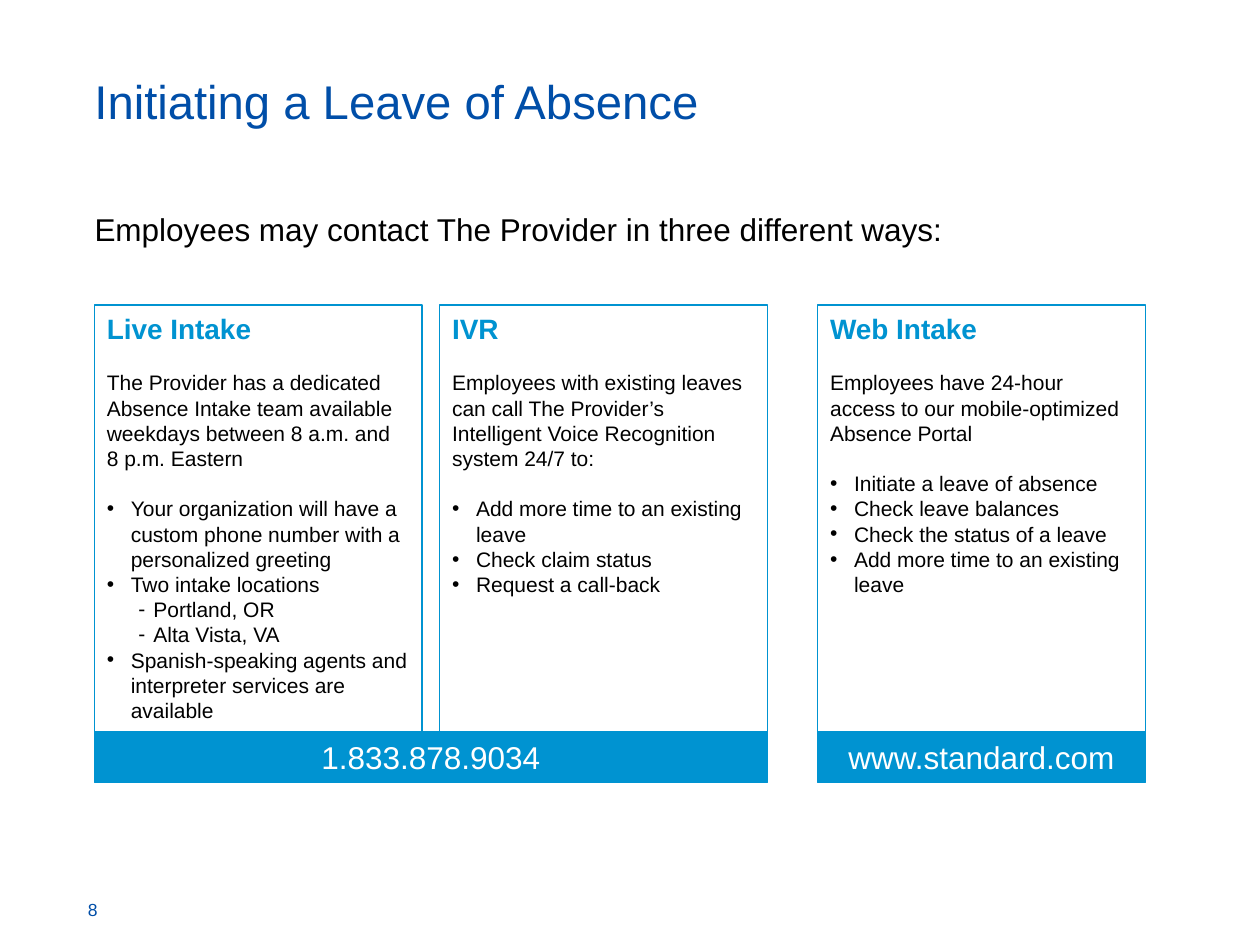
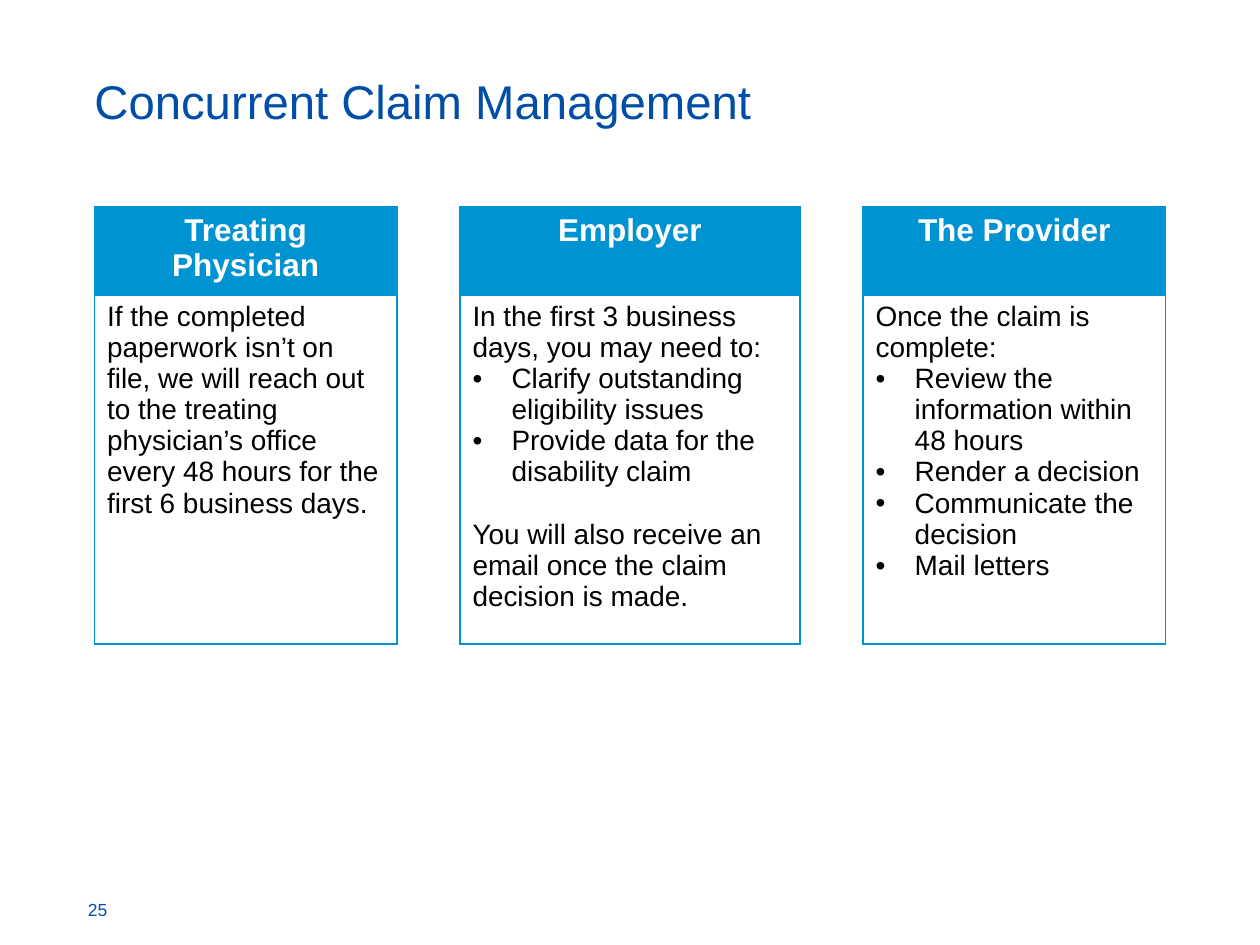
from lxml import etree
from pptx import Presentation
from pptx.dml.color import RGBColor
from pptx.enum.shapes import MSO_SHAPE
from pptx.enum.text import MSO_ANCHOR, PP_ALIGN
from pptx.oxml.ns import qn
from pptx.util import Inches, Pt

RECT = MSO_SHAPE.RECTANGLE
TOP, MID, LOW = MSO_ANCHOR.TOP, MSO_ANCHOR.MIDDLE, MSO_ANCHOR.BOTTOM
LEFT, CENTER = PP_ALIGN.LEFT, PP_ALIGN.CENTER

FONT = "Arial"
NAVY, BLUE, BLACK, WHITE = "004EA8", "0093D1", "000000", "FFFFFF"

# Grid: 100 columns by 75 rows, square cells
WIDE, HIGH = 100, 75
UNIT = Inches(0.1)
EDGE = 7.5       # left margin
BODY = 16.4      # top of the content
DOT, DASH = "•", "-"


def grid(*cells):
    return [round(n * UNIT) for n in cells]


def tint(code):
    return RGBColor.from_string(code)


def write(frame, text, size=12, color=BLACK, bold=False, align=LEFT,
          gap=0, mark=None, left=0, hang=0):
    """Add one paragraph, using the empty first one if it is free."""
    par = frame.paragraphs[0]
    if par.runs:
        par = frame.add_paragraph()
    par.alignment = align
    if gap:
        par.space_before = Pt(gap)
    if mark:
        props = par._p.get_or_add_pPr()
        props.set("marL", str(Inches(left)))
        props.set("indent", str(-Inches(hang)))
        face = etree.SubElement(props, qn("a:buFont"))
        face.set("typeface", FONT)
        etree.SubElement(props, qn("a:buChar")).set("char", mark)
    for i, line in enumerate(text.split("\n")):
        if i:
            par.add_line_break()
        run = par.add_run()
        run.text = line
        font = run.font
        font.name, font.size, font.bold = FONT, Pt(size), bold
        font.color.rgb = tint(color)


def label(slide, box, text, anchor=TOP, flush=True, **form):
    frame = slide.shapes.add_textbox(*grid(*box)).text_frame
    frame.word_wrap = True
    frame.vertical_anchor = anchor
    if flush:
        frame.margin_left = frame.margin_right = 0
        frame.margin_top = frame.margin_bottom = Inches(0.03)
    write(frame, text, **form)


def panel(slide, box, fill=None, anchor=TOP):
    shape = slide.shapes.add_shape(RECT, *grid(*box))
    shape.shadow.inherit = False
    shape.line.color.rgb = tint(BLUE)
    shape.line.width = Pt(0.75)
    if fill:
        shape.fill.solid()
        shape.fill.fore_color.rgb = tint(fill)
    else:
        shape.fill.background()
    frame = shape.text_frame
    frame.word_wrap = True
    frame.vertical_anchor = anchor
    return frame


def start(deck, title, page):
    """New slide with the shared title and page number."""
    slide = deck.slides.add_slide(deck.slide_layouts[6])
    label(slide, (EDGE, 5.5, 85, 5), title, anchor=MID, size=27, color=NAVY)
    label(slide, (6, 69.7, 5, 3.8), page, anchor=LOW, flush=False,
          size=10, color=NAVY)
    return slide


# Slide with contact cards
CARD, TALL, BAND = 26, 33.9, 4
LINE = 14.4      # one empty line of small text, in points


def card(slide, x, y, head, lead, points):
    frame = panel(slide, (x, y, CARD, TALL))
    write(frame, head, size=16, color=BLUE, bold=True)
    write(frame, lead, gap=LINE)
    for i, (mark, text) in enumerate(points):
        left, hang = (0.19, 0.19) if mark == DOT else (0.37, 0.12)
        write(frame, text, mark=mark, left=left, hang=hang,
              gap=0 if i else LINE)


def group(slide, x, y, cards, step, foot):
    """Cards side by side over one filled band."""
    for i, parts in enumerate(cards):
        card(slide, x + i * step, y, *parts)
    width = (len(cards) - 1) * step + CARD
    band = panel(slide, (x, y + TALL, width, BAND), BLUE, MID)
    write(band, foot, size=18, color=WHITE, align=CENTER)


PHONE = [
    ("Live Intake",
     "The Provider has a dedicated Absence Intake team available "
     "weekdays between 8 a.m. and \n8 p.m. Eastern",
     [(DOT, "Your organization will have a custom phone number with a "
            "personalized greeting"),
      (DOT, "Two intake locations"),
      (DASH, "Portland, OR"),
      (DASH, "Alta Vista, VA"),
      (DOT, "Spanish-speaking agents and interpreter services are "
            "available")]),
    ("IVR",
     "Employees with existing leaves can call The Provider’s Intelligent "
     "Voice Recognition system 24/7 to:",
     [(DOT, "Add more time to an existing leave"),
      (DOT, "Check claim status"),
      (DOT, "Request a call-back")]),
]
WEB = [
    ("Web Intake",
     "Employees have 24-hour access to our mobile-optimized Absence Portal",
     [(DOT, "Initiate a leave of absence"),
      (DOT, "Check leave balances"),
      (DOT, "Check the status of a leave"),
      (DOT, "Add more time to an existing leave")]),
]


def intake(deck):
    slide = start(deck, "Initiating a Leave of Absence", "8")
    label(slide, (EDGE, BODY, 85.8, 5.7),
          "Employees may contact The Provider in three different ways:",
          size=18)
    group(slide, EDGE, 24.2, PHONE, 27.4, "1.833.878.9034")
    group(slide, 64.9, 24.2, WEB, 0, "www.standard.com")


# Slide with the claim table
COLS = (24, 5, 27, 5, 24)
ROWS = (7, 27.7)
ROLES = [
    ("Treating Physician",
     [(None, "If the completed paperwork isn’t on file, we will reach out to "
             "the treating physician’s office every 48 hours for the first 6 "
             "business days.")]),
    ("Employer",
     [(None, "In the first 3 business days, you may need to:"),
      (DOT, "Clarify outstanding eligibility issues"),
      (DOT, "Provide data for the disability claim"),
      (None, "You will also receive an email once the claim decision is "
             "made.")]),
    ("The Provider",
     [(None, "Once the claim is complete:"),
      (DOT, "Review the information within 48 hours"),
      (DOT, "Render a decision"),
      (DOT, "Communicate the decision"),
      (DOT, "Mail letters")]),
]


def border(cell, sides):
    """Rule the named sides of a cell and clear the others."""
    props = cell._tc.get_or_add_tcPr()
    for side in "LRTB":
        rule = etree.SubElement(props, qn("a:ln" + side))
        if side in sides:
            rule.set("w", str(Pt(1)))
            fill = etree.SubElement(rule, qn("a:solidFill"))
            etree.SubElement(fill, qn("a:srgbClr")).set("val", BLUE)
        else:
            etree.SubElement(rule, qn("a:noFill"))


def table(slide, x, y, roles):
    box = grid(x, y, sum(COLS), sum(ROWS))
    sheet = slide.shapes.add_table(len(ROWS), len(COLS), *box).table
    sheet.first_row = sheet.horz_banding = False
    for col, wide in zip(sheet.columns, grid(*COLS)):
        col.width = wide
    for row, high in zip(sheet.rows, grid(*ROWS)):
        row.height = high
    for r in range(len(ROWS)):
        for c in range(len(COLS)):
            cell = sheet.cell(r, c)
            spacer = c % 2
            border(cell, "LR" if spacer else "LRTB")
            if r or spacer:
                cell.fill.background()
            else:
                cell.fill.solid()
                cell.fill.fore_color.rgb = tint(BLUE)
    for i, (head, lines) in enumerate(roles):
        write(sheet.cell(0, 2 * i).text_frame, head, size=18, color=WHITE,
              bold=True, align=CENTER)
        frame = sheet.cell(1, 2 * i).text_frame
        for n, (mark, text) in enumerate(lines):
            # Plain text after a list is set off by one line
            gap = 0 if mark or n == 0 else 17.8
            write(frame, text, size=16, mark=mark, left=0.31, hang=0.31,
                  gap=gap)


def claims(deck):
    slide = start(deck, "Concurrent Claim Management", "25")
    table(slide, EDGE, BODY, ROLES)


def main():
    deck = Presentation()
    deck.slide_width, deck.slide_height = grid(WIDE, HIGH)
    intake(deck)
    claims(deck)
    deck.save("out.pptx")


if __name__ == "__main__":
    main()
